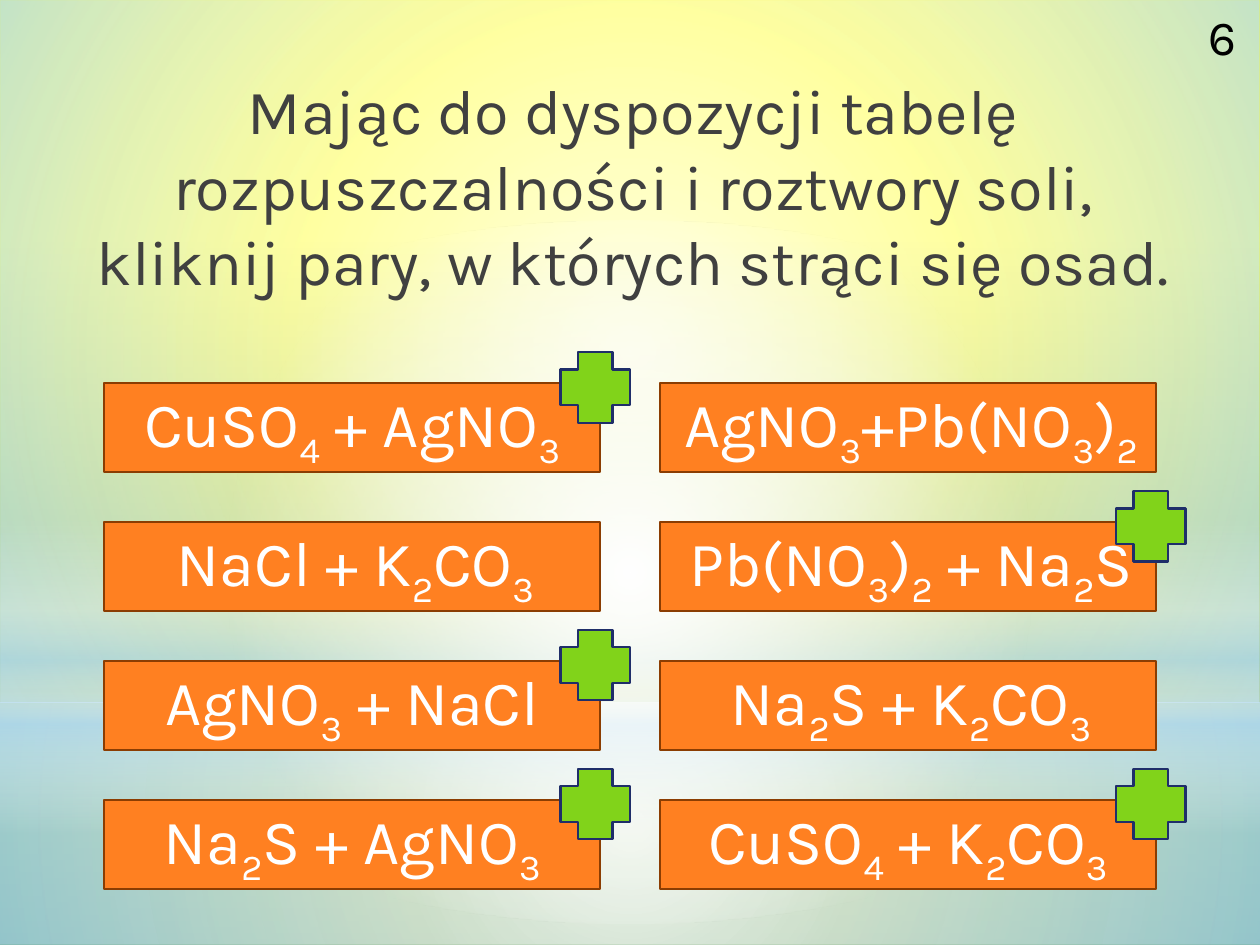
import lxml.etree
import pptx
import pptx.dml.color
import pptx.enum.shapes
import pptx.enum.text
import pptx.oxml.ns
import pptx.util

Cm, Pt = pptx.util.Cm, pptx.util.Pt
RGB = pptx.dml.color.RGBColor.from_string
Kind = pptx.enum.shapes.MSO_SHAPE
Align = pptx.enum.text.PP_ALIGN
Fit = pptx.enum.text.MSO_AUTO_SIZE
qn = pptx.oxml.ns.qn


class Theme:
    font = "Karla"
    big, small = 36, 28
    ink, black, white = "404040", "000000", "FFFFFF"
    card, edge = "FF8021", "8B3D02"
    cross, rim = "81D31A", "1F2E69"
    sky = "B4DCFA"
    base = [(25, "FFFF00", 100), (62, "8AB50A", 100), (100, "156B13", 100)]
    floor = [(0, white, 91), (37, white, 76), (100, sky, 79)]
    dome = [(0, white, 89), (48, white, 62), (100, sky, 79)]
    band = [(0, white, 0), (29, white, 30), (45, sky, 40),
            (55, white, 26), (65, sky, 60), (100, white, 0)]
    glow = [(0, white, 100), (56, white, 0)]


# Salt pairs row by row: formula (subscripts between underscores),
# whether a solid forms, left indent in cm
PAIRS = [
    [("CuSO_4_ + AgNO_3_", True, 0), ("AgNO_3_+Pb(NO_3_)_2_", False, 0.13)],
    [("NaCl + K_2_CO_3_", False, 0.13), ("Pb(NO_3_)_2_ + Na_2_S", True, 0.13)],
    [("AgNO_3_ + NaCl", True, 0), ("Na_2_S + K_2_CO_3_", False, 0.13)],
    [("Na_2_S + AgNO_3_", True, 0), ("CuSO_4_ + K_2_CO_3_", True, 0)],
]


def write(frame, text, size=Theme.big, color=Theme.white, indent=0,
          after=0, fit=Fit.SHAPE_TO_FIT_TEXT):
    frame.word_wrap = True
    frame.auto_size = fit
    para = frame.paragraphs[0]
    para.alignment = Align.CENTER
    para.space_after = Pt(after)
    props = para._p.get_or_add_pPr()
    props.set("marL", str(Cm(indent)))
    props.set("indent", "0")
    lxml.etree.SubElement(props, qn("a:buNone"))
    for i, part in enumerate(text.split("_")):
        if not part:
            continue
        run = para.add_run()
        run.text = part
        run.font.name = Theme.font
        run.font.size = Pt(size)
        run.font.color.rgb = RGB(color)
        if i % 2:
            run.font._element.set("baseline", "-25000")


def blend(fill, root, stops, round=False):
    fill.gradient()
    grad = next(root.iter(qn("a:gradFill")))
    for kid in list(grad):
        grad.remove(kid)
    add = lxml.etree.SubElement
    items = add(grad, qn("a:gsLst"))
    for pos, color, alpha in stops:
        stop = add(items, qn("a:gs"), pos=str(pos * 1000))
        tint = add(stop, qn("a:srgbClr"), val=color)
        if alpha < 100:
            add(tint, qn("a:alpha"), val=str(alpha * 1000))
    if round:
        ring = add(grad, qn("a:path"), path="circle")
        add(ring, qn("a:fillToRect"), l="50000", t="50000", r="50000", b="50000")
    else:
        add(grad, qn("a:lin"), ang="5400000", scaled="0")


def draw(slide, kind, box, fill=None, line=None):
    shape = slide.shapes.add_shape(kind, *map(Cm, box))
    shape.shadow.inherit = False
    if fill:
        shape.fill.solid()
        shape.fill.fore_color.rgb = RGB(fill)
    if line:
        shape.line.color.rgb = RGB(line)
        shape.line.width = Pt(1.25)
    else:
        shape.line.fill.background()
    return shape


def scene(slide, box):
    left, top, wide, high = box
    blend(slide.background.fill, slide.element, Theme.base)
    cut = 14.17
    layers = [
        (Kind.RECTANGLE, cut, high - cut, Theme.floor, True),
        (Kind.RECTANGLE, 0, cut, Theme.dome, True),
        (Kind.RECTANGLE, 10.46, 6.35, Theme.band, False),
        (Kind.OVAL, 4.45, cut, Theme.glow, True),
    ]
    for kind, y, tall, stops, round in layers:
        layer = draw(slide, kind, (left, top + y, wide, tall))
        blend(layer.fill, layer.element, stops, round)


def task(slide, box):
    body = slide.placeholders[1]
    slide.shapes.title.element.getparent().remove(slide.shapes.title.element)
    body.left, body.top, body.width, body.height = map(Cm, box)
    # Bring the text in front of the scene
    body.element.getparent().append(body.element)
    write(body.text_frame, "Mając do dyspozycji tabelę rozpuszczalności "
          "i roztwory soli, kliknij pary, w których strąci się osad.",
          color=Theme.ink, indent=0.13, after=3, fit=Fit.NONE)


def cards(slide, box):
    left, top, wide, high = box
    card_w, card_h = 10, 1.8
    step_x = wide - card_w
    step_y = (high - card_h) / (len(PAIRS) - 1)
    marks = []
    for row, pairs in enumerate(PAIRS):
        for col, (text, solid, indent) in enumerate(pairs):
            x, y = left + col * step_x, top + row * step_y
            card = draw(slide, Kind.RECTANGLE, (x, y, card_w, card_h),
                        Theme.card, Theme.edge)
            write(card.text_frame, text, indent=indent)
            if solid:
                marks.append((x + 9.2, y - 0.62, 1.4, 1.42))
    # Crosses lie over all the cards
    for mark in marks:
        draw(slide, Kind.CROSS, mark, Theme.cross, Theme.rim)


def number(slide, box):
    label = slide.shapes.add_textbox(*map(Cm, box))
    write(label.text_frame, "6", size=Theme.small, color=Theme.black)


def main():
    deck = pptx.Presentation()
    deck.slide_width, deck.slide_height = Cm(25.4), Cm(19.05)
    slide = deck.slides.add_slide(deck.slide_layouts[1])
    scene(slide, (0, 0, 25.4, 19.05))
    task(slide, (1.1, 1.32, 23.2, 5.8))
    cards(slide, (2.1, 7.72, 21.2, 10.2))
    number(slide, (23.9, 0, 1.5, 1.45))
    deck.save("out.pptx")


if __name__ == "__main__":
    main()
